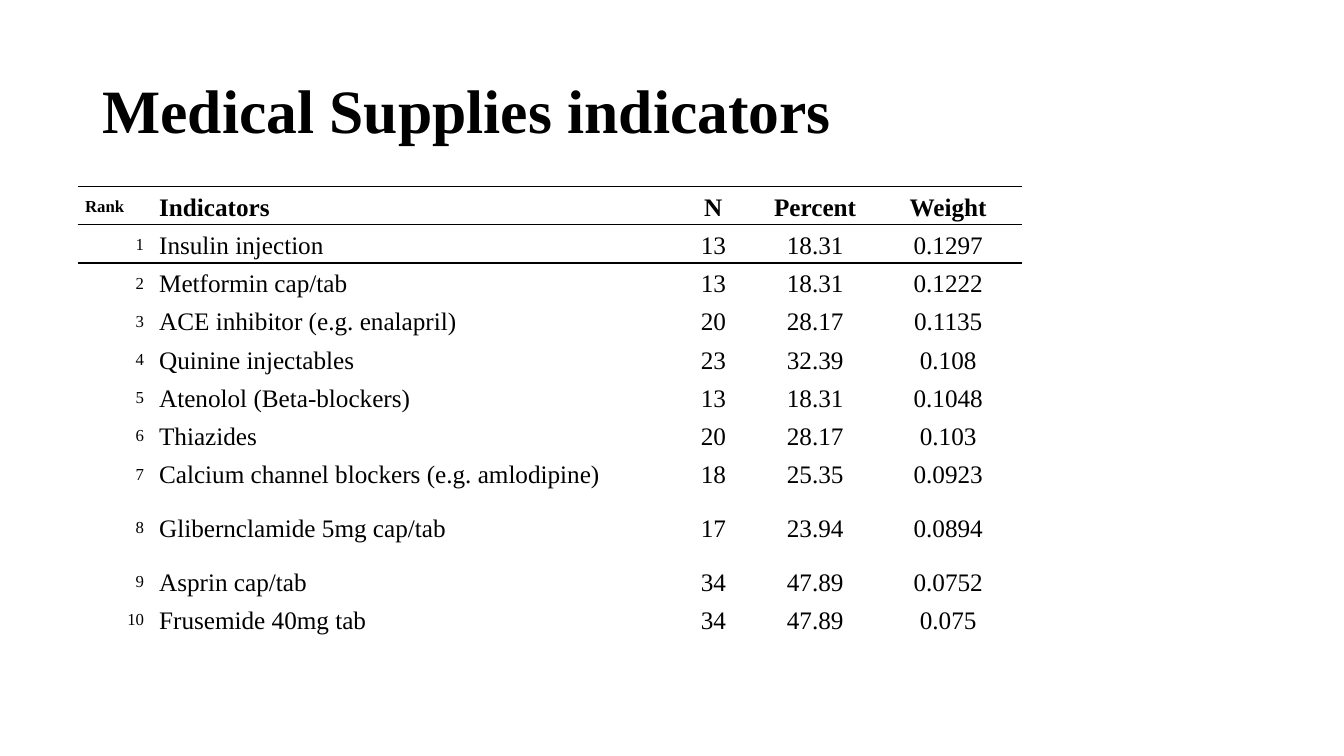
from pptx import Presentation
from pptx import util as u
from pptx.dml import color
from pptx.enum import text
from pptx.oxml import parse_xml
from pptx.oxml import ns

Pt = u.Pt
BLACK = color.RGBColor(0, 0, 0)
FONT = "Times New Roman"
TITLE = "Medical Supplies indicators"
HEAD = ("Rank", "Indicators", "N", "Percent", "Weight")
ITEMS = [
    ("Insulin injection", "13", "18.31", "0.1297"),
    ("Metformin cap/tab", "13", "18.31", "0.1222"),
    ("ACE inhibitor (e.g. enalapril)", "20", "28.17", "0.1135"),
    ("Quinine injectables", "23", "32.39", "0.108"),
    ("Atenolol (Beta-blockers)", "13", "18.31", "0.1048"),
    ("Thiazides", "20", "28.17", "0.103"),
    ("Calcium channel blockers (e.g. amlodipine)", "18", "25.35", "0.0923"),
    ("Glibernclamide 5mg cap/tab", "17", "23.94", "0.0894"),
    ("Asprin cap/tab", "34", "47.89", "0.0752"),
    ("Frusemide 40mg tab", "34", "47.89", "0.075"),
]
WIDTHS = (52.9, 371, 60.5, 85, 105.1)
ROW, TALL = 27.3, 49.6
TALL_RANK = 8
PLAIN = "{2D5ABB26-0587-4C30-8999-92F81FD0307C}"
LEFT, MID, RIGHT = text.PP_ALIGN.LEFT, text.PP_ALIGN.CENTER, text.PP_ALIGN.RIGHT
ALIGN = (RIGHT, LEFT, MID, MID, MID)
CELL = {
    "margin_left": Pt(5.4),
    "margin_right": Pt(5.4),
    "margin_top": 0,
    "margin_bottom": 0,
    "vertical_anchor": text.MSO_ANCHOR.MIDDLE,
}


def apply(item, values):
    for key, value in values.items():
        setattr(item, key, value)


def style(para, size, bold, align, space):
    apply(para, {"alignment": align, "line_spacing": space})
    font = para.runs[0].font
    apply(font, {"name": FONT, "size": Pt(size), "bold": bold})
    font.color.rgb = BLACK


def rule(cell, sides):
    props = cell._tc.get_or_add_tcPr()
    for spot, side in enumerate(sides):
        props.insert(spot, parse_xml(
            f'<a:ln{side} {ns.nsdecls("a")} w="{Pt(1)}"><a:solidFill>'
            f'<a:srgbClr val="{BLACK}"/></a:solidFill></a:ln{side}>'))


def main():
    deck = Presentation()
    apply(deck, {"slide_width": Pt(960), "slide_height": Pt(540)})
    slide = deck.slides.add_slide(deck.slide_layouts[5])

    title = slide.shapes.title
    apply(title, {"left": Pt(66), "top": Pt(28.8),
                  "width": Pt(828), "height": Pt(104.4)})
    title.text_frame.text = TITLE
    title.text_frame.vertical_anchor = text.MSO_ANCHOR.MIDDLE
    style(title.text_frame.paragraphs[0], 44, True, LEFT, 0.9)

    rows = [HEAD] + [(str(rank), *item) for rank, item in enumerate(ITEMS, 1)]
    highs = [TALL if r == TALL_RANK else ROW for r in range(len(rows))]
    grid = slide.shapes.add_table(
        len(rows), len(HEAD), Pt(55.4), Pt(133.2),
        Pt(sum(WIDTHS)), Pt(sum(highs))).table
    apply(grid, {"first_row": False, "horz_banding": False})
    grid._tbl.tblPr.find(ns.qn("a:tableStyleId")).text = PLAIN
    for col, wide in zip(grid.columns, WIDTHS):
        col.width = Pt(wide)
    for r, (row, high) in enumerate(zip(rows, highs)):
        grid.rows[r].height = Pt(high)
        for c, word in enumerate(row):
            cell = grid.cell(r, c)
            cell.text = word
            apply(cell, CELL)
            cell.fill.background()
            rule(cell, {0: "TB", 1: "T"}.get(r, ""))
            align = LEFT if r == c == 0 else ALIGN[c]
            style(cell.text_frame.paragraphs[0], 18 if c else 12,
                  r == 0, align, 1.15)
    deck.save("out.pptx")


if __name__ == "__main__":
    main()
